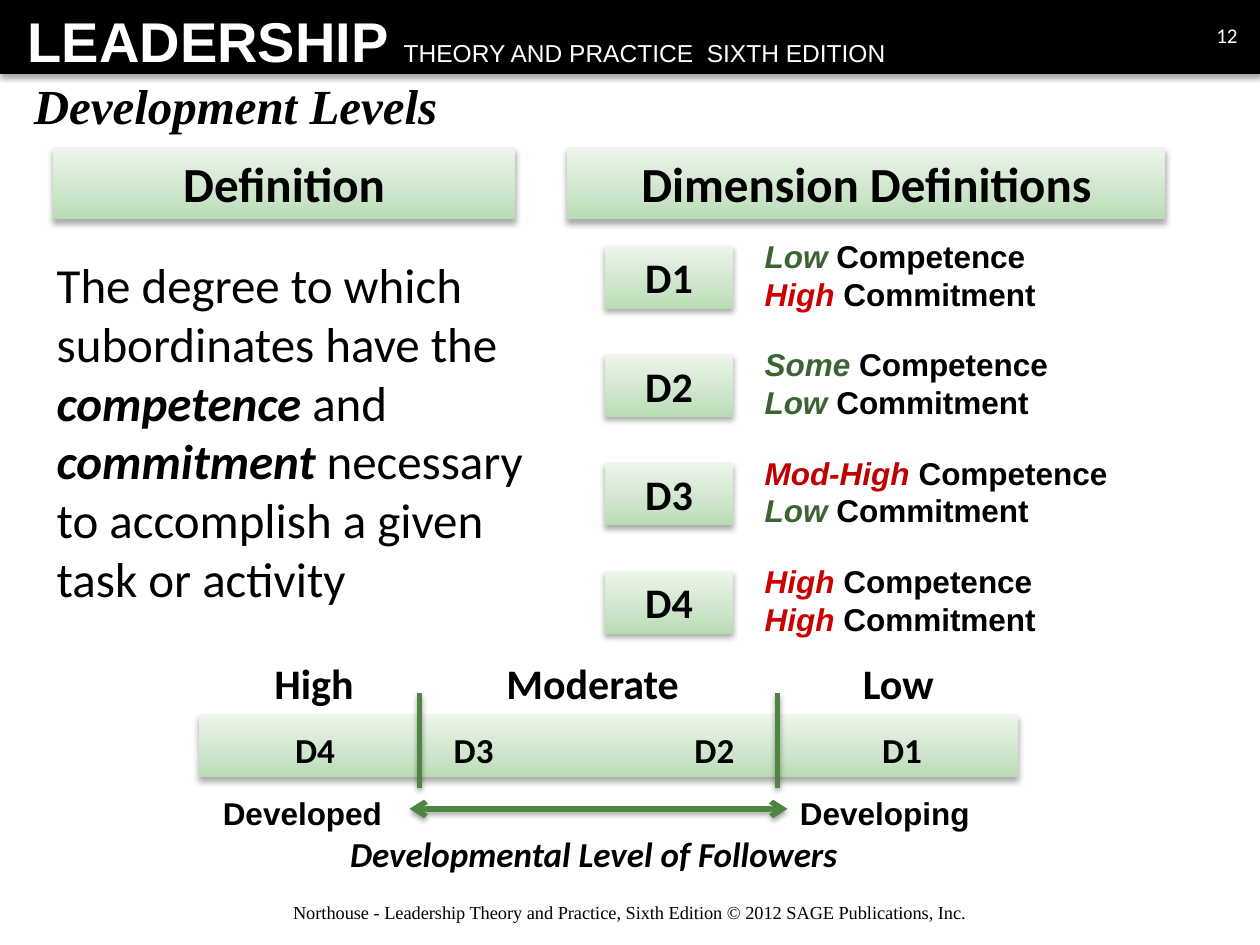
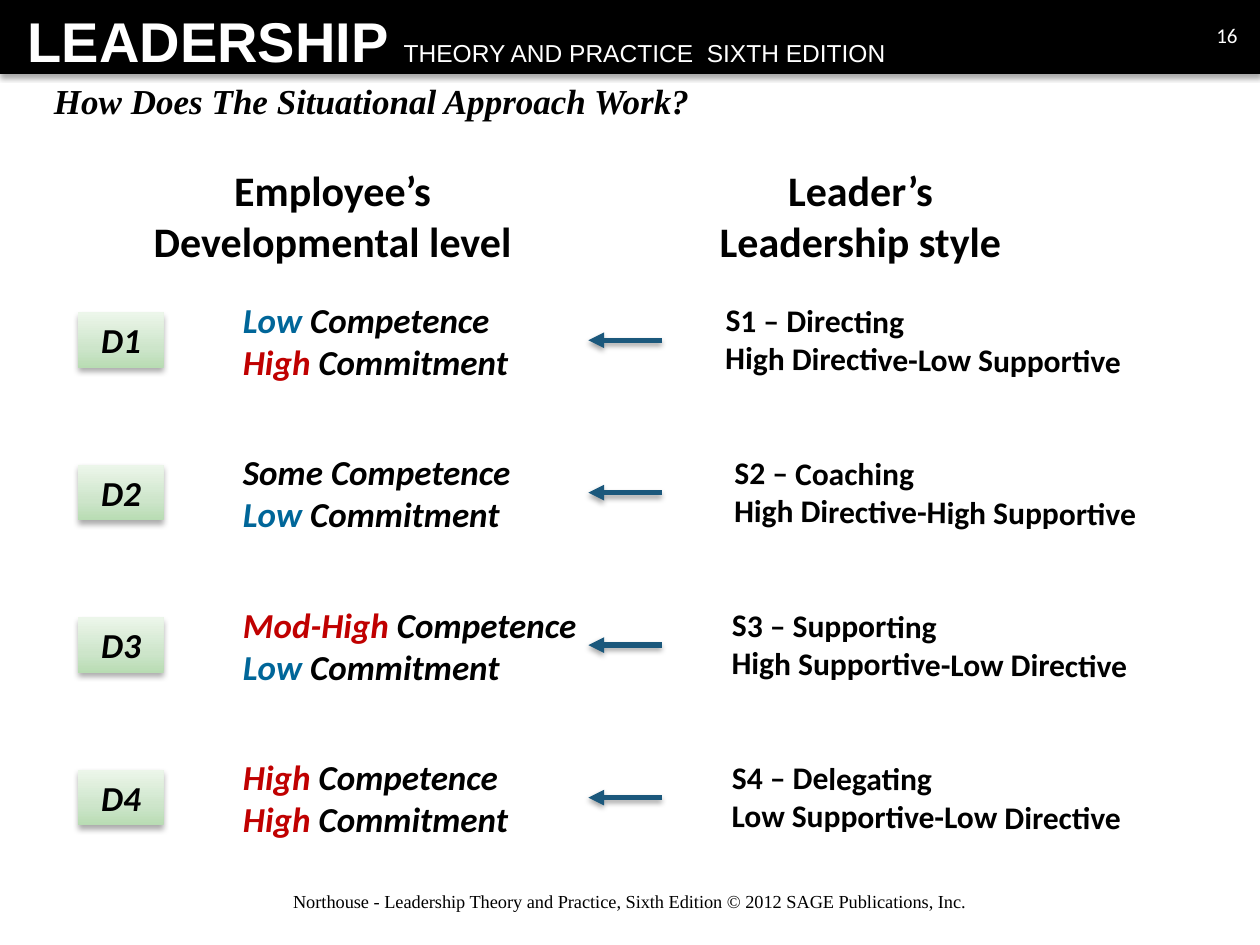
from pptx import Presentation
from pptx.dml.color import RGBColor
from pptx.enum.shapes import MSO_CONNECTOR, MSO_SHAPE
from pptx.enum.text import MSO_ANCHOR, PP_ALIGN
from pptx.oxml import parse_xml
from pptx.oxml.ns import nsdecls, qn
from pptx.util import Inches, Pt

COLORS = {
    "black": "000000",
    "white": "FFFFFF",
    "forest": "3B6432",
    "green": "4E8542",
    "scarlet": "CC0000",
    "red": "C00000",
    "blue": "006699",
    "navy": "1B587C",
}
PANEL_STOPS = [(0, "B8DCB3"), (35, "CDE5CA"), (100, "ECF6EA")]
PANEL_SHADOW = (32, 3.5, 2.2)
LINE_SHADOW = (35, 3.1, 1.8)
FOOTER = "Northouse - Leadership Theory and Practice, Sixth Edition © 2012 SAGE Publications, Inc."

LEVELS = {
    "D1": ("Low", "High"),
    "D2": ("Some", "Low"),
    "D3": ("Mod-High", "Low"),
    "D4": ("High", "High"),
}
DIMENSION_ACCENTS = {"Low": "forest", "Some": "forest", "High": "scarlet", "Mod-High": "red"}
MATCH_ACCENTS = {"Low": "blue", "Some": "black", "High": "red", "Mod-High": "red"}
STYLES = [
    (5.66, 3.5, "S1 – Directing", "High Directive-Low Supportive"),
    (5.73, 3.5, "S2 – Coaching", "High Directive-High Supportive"),
    (5.71, 3.41, "S3 – Supporting", "High Supportive-Low Directive"),
    (5.71, 3.41, "S4 – Delegating", "Low Supportive-Low Directive"),
]


def rgb(name):
    return RGBColor.from_string(COLORS[name])


def inches(values):
    return [Inches(round(value, 2)) for value in values]


def cast_shadow(shape, alpha, blur, distance):
    shape._element.spPr.append(parse_xml(
        f'<a:effectLst {nsdecls("a")}><a:outerShdw blurRad="{Pt(blur)}" dist="{Pt(distance)}" '
        f'dir="5400000" rotWithShape="0"><a:srgbClr val="{COLORS["black"]}">'
        f'<a:alpha val="{alpha * 1000}"/></a:srgbClr></a:outerShdw></a:effectLst>'))


def write(shape, lines, size, font="Calibri", color="black", bold=True, italic=False,
          align=PP_ALIGN.LEFT, anchor=MSO_ANCHOR.TOP, wrap=True):
    frame = shape.text_frame
    frame.word_wrap = wrap
    frame.vertical_anchor = anchor
    for index, line in enumerate(lines):
        paragraph = frame.add_paragraph() if index else frame.paragraphs[0]
        paragraph.alignment = align
        for piece in [(line, {})] if isinstance(line, str) else line:
            text, changes = piece
            look = {"size": size, "color": color, "bold": bold, "italic": italic, **changes}
            run = paragraph.add_run()
            run.text = text
            run.font.name = font
            run.font.size = Pt(look["size"])
            run.font.bold = look["bold"]
            run.font.italic = look["italic"]
            run.font.color.rgb = rgb(look["color"])


def add_text(shapes, box, lines, size, **look):
    label = shapes.add_textbox(*inches(box))
    write(label, lines, size, **look)
    return label


def add_panel(shapes, box, text="", size=24, italic=False):
    panel = shapes.add_shape(MSO_SHAPE.RECTANGLE, *inches(box))
    panel.fill.gradient()
    panel.fill.gradient_angle = 90
    stops = panel._element.spPr.find(".//" + qn("a:gsLst"))
    for stop in list(stops):
        stops.remove(stop)
    for position, color in PANEL_STOPS:
        stops.append(parse_xml(f'<a:gs {nsdecls("a")} pos="{position * 1000}">'
                               f'<a:srgbClr val="{color}"/></a:gs>'))
    panel.line.fill.background()
    cast_shadow(panel, *PANEL_SHADOW)
    if text:
        write(panel, [text], size, italic=italic, align=PP_ALIGN.CENTER)


def add_line(shapes, ends, color, head=None, tail=None):
    line = shapes.add_connector(MSO_CONNECTOR.STRAIGHT, *inches(ends))
    line.line.color.rgb = rgb(color)
    line.line.width = Pt(3)
    for tag, arrow in (("headEnd", head), ("tailEnd", tail)):
        if arrow:
            line.line._get_or_add_ln().append(
                parse_xml(f'<a:{tag} {nsdecls("a")} type="{arrow}"/>'))
    cast_shadow(line, *LINE_SHADOW)


def add_rating(shapes, box, level, accents, size, font, noun_italic):
    lines = [[(rating, {"color": accents[rating], "italic": True}),
              (f" {noun}", {"italic": noun_italic})]
             for rating, noun in zip(LEVELS[level], ("Competence", "Commitment"))]
    add_text(shapes, box, lines, size, font=font, wrap=False)


def start_slide(deck, number, title, title_box, title_size, title_anchor, footer_box):
    slide = deck.slides.add_slide(deck.slide_layouts[6])
    shapes = slide.shapes
    band = shapes.add_shape(MSO_SHAPE.RECTANGLE, *inches((0, 0, 10, 0.58)))
    band.fill.solid()
    band.fill.fore_color.rgb = rgb("black")
    band.line.color.rgb = rgb("black")
    band.line.width = Pt(0.75)
    cast_shadow(band, *LINE_SHADOW)
    masthead = add_text(shapes, (0, 0, 10, 0.64), [[
        ("LEADERSHIP ", {}),
        ("THEORY AND PRACTICE  SIXTH EDITION", {"size": 14, "bold": False}),
    ]], 32, font="Arial", color="white")
    masthead.text_frame.margin_left = Inches(0.22)
    add_text(shapes, title_box, [title], title_size, font="Times New Roman",
             italic=True, anchor=title_anchor)
    add_text(shapes, (9.5, 0.08, 0.42, 0.4), [number], 12, color="white", bold=False,
             align=PP_ALIGN.RIGHT, anchor=MSO_ANCHOR.MIDDLE)
    add_text(shapes, footer_box, [FOOTER], 10.5, font="Times New Roman", bold=False,
             align=PP_ALIGN.CENTER, anchor=MSO_ANCHOR.MIDDLE)
    return shapes


def add_follower_scale(shapes):
    add_panel(shapes, (1.58, 5.67, 6.5, 0.5))
    for divider in (3.33, 6.17):
        add_line(shapes, (divider, 5.5, divider, 6.25), "green")
    for level, center in (("D4", 2.5), ("D3", 3.76), ("D2", 5.67), ("D1", 7.16)):
        add_text(shapes, (center - 0.4, 5.73, 0.8, 0.44), [level], 20, align=PP_ALIGN.CENTER)
    for degree, left, width in (("High", 2.08, 0.84), ("Moderate", 3.92, 1.59), ("Low", 6.75, 0.77)):
        add_text(shapes, (left, 5.17, width, 0.51), [degree], 24, wrap=False)
    for stage, left, width in (("Developed", 1.67, 1.47), ("Developing", 6.25, 1.55)):
        add_text(shapes, (left, 6.25, width, 0.4), [stage], 18, font="Arial", wrap=False)
    add_line(shapes, (3.25, 6.42, 6.25, 6.42), "green", head="arrow", tail="arrow")
    add_text(shapes, (2.68, 6.56, 4.16, 0.44), ["Developmental Level of Followers"], 20,
             italic=True, wrap=False)


def build_development_levels(deck):
    shapes = start_slide(deck, "12", "Development Levels", (0.17, 0.58, 9.42, 0.5), 28,
                         MSO_ANCHOR.MIDDLE, (0.5, 6.98, 9, 0.52))
    add_panel(shapes, (0.42, 1.17, 3.67, 0.57), "Definition", 28)
    add_panel(shapes, (4.5, 1.17, 4.75, 0.57), "Dimension Definitions", 28)
    emphasis = {"bold": True, "italic": True}
    definition = add_text(shapes, (0.17, 1.97, 4.25, 2.94), [[
        ("The degree to which subordinates have the ", {}),
        ("competence ", emphasis),
        ("and ", {}),
        ("commitment ", emphasis),
        ("necessary to accomplish a given task or activity", {}),
    ]], 28, bold=False)
    definition.text_frame.margin_left = Inches(0.28)
    rating_widths = (2.38, 2.47, 2.95, 2.38)
    for row, (level, width) in enumerate(zip(LEVELS, rating_widths)):
        top = 1.95 + 0.86 * row
        add_panel(shapes, (4.8, top, 1.02, 0.5), level)
        add_rating(shapes, (5.97, top - 0.12, width, 0.71), level,
                   DIMENSION_ACCENTS, 18, "Arial", False)
    add_follower_scale(shapes)


def build_situational_approach(deck):
    shapes = start_slide(deck, "16", "How Does The Situational Approach Work?",
                         (0.33, 0.58, 9.42, 0.33), 20, MSO_ANCHOR.TOP, (0.5, 6.95, 9, 0.4))
    add_text(shapes, (0.25, 1.26, 4.78, 0.91), ["Employee’s", "Developmental level"], 24,
             align=PP_ALIGN.CENTER)
    add_text(shapes, (5.58, 1.26, 2.5, 0.91), ["Leader’s", "Leadership style"], 24,
             align=PP_ALIGN.CENTER)
    rating_widths = (2.34, 2.34, 2.87, 2.32)
    for row, (level, width, style) in enumerate(zip(LEVELS, rating_widths, STYLES)):
        top = 2.48 + 1.21 * row
        style_left, style_width, style_name, behavior = style
        match = shapes.add_group_shape().shapes
        add_panel(match, (0.62, top, 0.68, 0.44), level, 20, italic=True)
        add_rating(match, (1.83, top - 0.16, width, 0.77), level,
                   MATCH_ACCENTS, 20, "Calibri", True)
        leader_style = add_text(match, (style_left, top - 0.13, style_width, 0.71),
                                [style_name, behavior], 18)
        leader_style.rotation = 0.5
        add_line(match, (4.67, top + 0.22, 5.25, top + 0.22), "navy", head="triangle")


def main():
    deck = Presentation()
    deck.slide_width = Inches(10)
    deck.slide_height = Inches(7.5)
    build_development_levels(deck)
    build_situational_approach(deck)
    deck.save("out.pptx")


if __name__ == "__main__":
    main()
